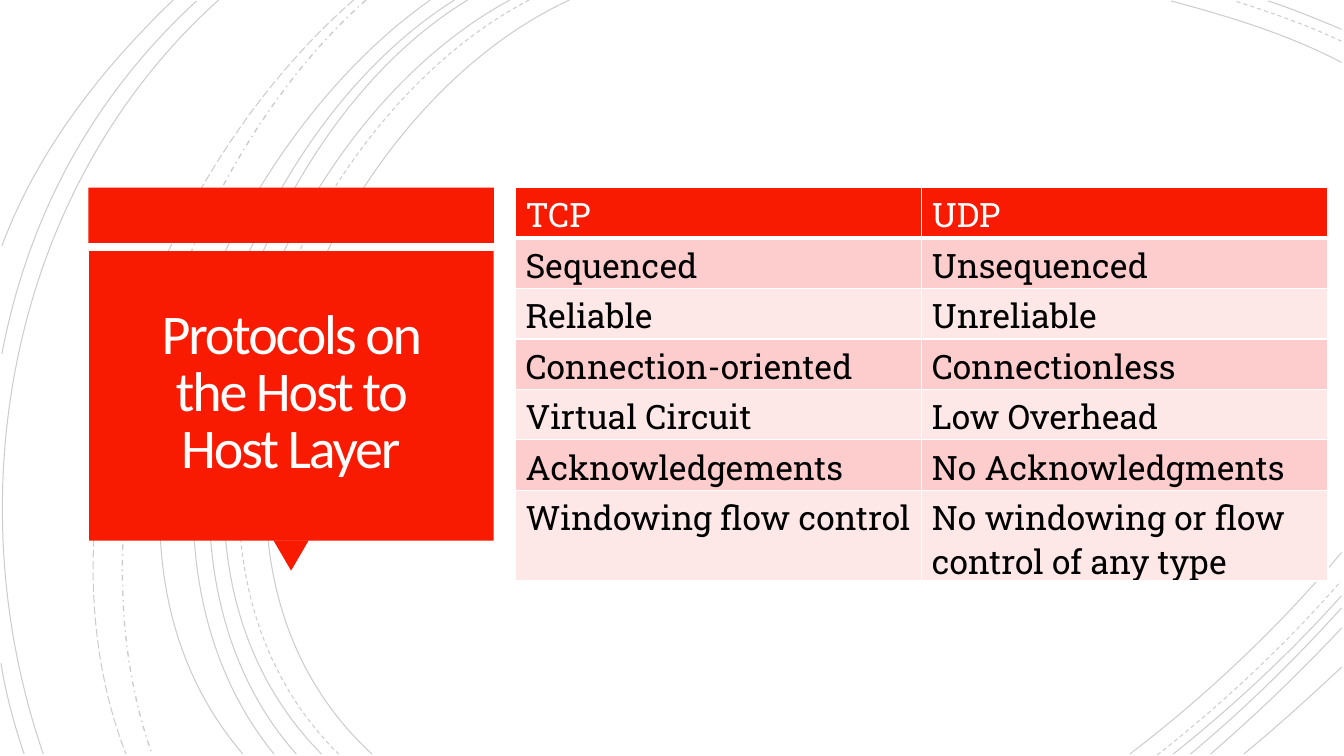
from lxml import etree
from pptx import Presentation
from pptx.dml.color import RGBColor
from pptx.enum.dml import MSO_LINE
from pptx.enum.shapes import MSO_SHAPE
from pptx.enum.text import MSO_ANCHOR, PP_ALIGN
from pptx.oxml.ns import qn
from pptx.util import Pt

SOLID, DASH = MSO_LINE.SOLID, MSO_LINE.DASH
LONG_DASH, DASH_DOT = MSO_LINE.LONG_DASH, MSO_LINE.DASH_DOT
RECTANGLE, TRIANGLE = MSO_SHAPE.RECTANGLE, MSO_SHAPE.ISOSCELES_TRIANGLE
MIDDLE, CENTER = MSO_ANCHOR.MIDDLE, PP_ALIGN.CENTER

RED, PALE_RED, PALEST_RED = "F81B02", "FCCDCC", "FEE8E7"
WHITE, TITLE_WHITE, BLACK = "FFFFFF", "FFFEFF", "000000"

# Each arc: start, two control points, end; all in points.
ARCS = [
    (SOLID, [(406.8, 0), (226.8, 82.8), (103, 388.8), (265.7, 538.6)]),
    (SOLID, [(958.3, 44.6), (920.2, 24.5), (877, 11.5), (836.6, 0.7)]),
    (SOLID, [(807.1, 538.6), (861.8, 496.8), (913.7, 447.8), (958.3, 394.6)]),
    (DASH, [(378, 0), (205.2, 90), (88.6, 386.6), (241.9, 538.6)]),
    (DASH, [(958.3, 29.5), (933.8, 18), (907.2, 8.6), (882, 0.7)]),
    (DASH, [(826.6, 539.3), (873.4, 502.6), (918, 460.8), (957.6, 415.4)]),
    (SOLID, [(364.3, 0), (194.4, 91.4), (79.2, 386.6), (229.7, 538.6)]),
    (SOLID, [(958.3, 20.9), (941, 13.7), (923.8, 6.5), (905.8, 0.7)]),
    (SOLID, [(838.1, 538.6), (880.6, 504.7), (921.6, 466.6), (958.3, 425.5)]),
    (SOLID, [(334.1, 0), (175.7, 95.8), (79.2, 389.5), (211.7, 538.6)]),
    (SOLID, [(850.3, 538.6), (888.5, 506.9), (924.5, 471.6), (958.3, 434.2)]),
    (SOLID, [(324.7, 0), (166.3, 99.4), (69.8, 383.8), (195.8, 538.6)]),
    (SOLID, [(864.7, 538.6), (897.1, 510.5), (928.8, 480.2), (958.3, 448.6)]),
    (SOLID, [(307.4, 0), (156.2, 105.8), (38.2, 380.9), (173.5, 538.6)]),
    (SOLID, [(888.5, 538.6), (912.2, 519.1), (935.3, 498.2), (958.3, 476.6)]),
    (DASH_DOT, [(261.4, 0), (126.7, 119.5), (46.8, 366.5), (108.7, 538.6)]),
    (LONG_DASH, [(252.7, 0), (113, 121.7), (20.9, 359.3), (90, 538.6)]),
    (SOLID, [(156.2, 0), (7.9, 133.2), (-33.1, 352.8), (31, 538.6)]),
    (SOLID, [(140.4, 0.7), (66.2, 69.1), (20.2, 154.1), (1.4, 252.7)]),
    (SOLID, [(0.7, 473.8), (4.3, 496.1), (10.1, 517.7), (17.3, 538.6)]),
    (SOLID, [(123.8, 0), (72, 49.7), (26.6, 108), (1.4, 175.7)]),
]

PROTOCOLS = [
    ("TCP", "UDP"),
    ("Sequenced", "Unsequenced"),
    ("Reliable", "Unreliable"),
    ("Connection-oriented", "Connectionless"),
    ("Virtual Circuit", "Low Overhead"),
    ("Acknowledgements", "No Acknowledgments"),
    ("Windowing flow control", "No windowing or flow control of any type"),
]


def color(hex_code):
    return RGBColor.from_string(hex_code)


class SlideBuilder:
    title_font = "Calibri"
    table_font = "Roboto Slab"

    def __init__(self, page):
        self.page = page

    def style(self, paragraph, font_name, size, hex_code):
        font = paragraph.font
        font.name, font.size, font.bold = font_name, Pt(size), False
        font.color.rgb = color(hex_code)

    def arc(self, dash, points):
        """Draw one faint cubic curve through a start, two controls and an end."""
        start, *others = [(Pt(x), Pt(y)) for x, y in points]
        builder = self.page.shapes.build_freeform(*start)
        builder.add_line_segments(others, close=False)
        shape = builder.convert_to_shape()
        segments = list(shape._element.iter(qn("a:lnTo")))
        curve = etree.SubElement(segments[0].getparent(), qn("a:cubicBezTo"))
        for segment in segments:
            curve.append(segment[0])
            segment.getparent().remove(segment)
        shape.shadow.inherit = False
        shape.fill.background()
        shape.line.color.rgb = color(BLACK)
        shape.line.width = Pt(1 if dash == DASH_DOT else 0.75)
        shape.line.dash_style = dash
        ink = shape.line._ln.find(".//" + qn("a:srgbClr"))
        etree.SubElement(ink, qn("a:alpha"), val="20000")

    def block(self, kind, left, top, width, height, rotation=0):
        shape = self.page.shapes.add_shape(kind, Pt(left), Pt(top), Pt(width), Pt(height))
        shape.rotation = rotation
        shape.shadow.inherit = False
        shape.fill.solid()
        shape.fill.fore_color.rgb = color(RED)
        shape.line.fill.background()

    def title(self, text, left, top, width, height):
        box = self.page.shapes.add_textbox(Pt(left), Pt(top), Pt(width), Pt(height))
        frame = box.text_frame
        frame.word_wrap = True
        frame.vertical_anchor = MIDDLE
        frame.margin_left = frame.margin_right = Pt(18)
        frame.margin_top = frame.margin_bottom = Pt(18)
        paragraph = frame.paragraphs[0]
        paragraph.text = text
        paragraph.alignment = CENTER
        paragraph.line_spacing = 0.85
        self.style(paragraph, self.title_font, 40, TITLE_WHITE)
        paragraph._p.pPr.find(qn("a:defRPr")).set("spc", "-150")

    def cell_borders(self, cell, bottom_width):
        properties = cell._tc.get_or_add_tcPr()
        for side, width in (("L", 1), ("R", 1), ("T", 1), ("B", bottom_width)):
            line = etree.SubElement(properties, qn("a:ln" + side), w=str(Pt(width)))
            fill = etree.SubElement(line, qn("a:solidFill"))
            etree.SubElement(fill, qn("a:srgbClr"), val=WHITE)

    def table(self, rows, left, top, width, height, row_height):
        frame = self.page.shapes.add_table(
            len(rows), len(rows[0]), Pt(left), Pt(top), Pt(width), Pt(height))
        for row_index, texts in enumerate(rows):
            header = row_index == 0
            band = RED if header else (PALEST_RED, PALE_RED)[row_index % 2]
            frame.table.rows[row_index].height = Pt(row_height)
            for column_index, text in enumerate(texts):
                cell = frame.table.cell(row_index, column_index)
                self.cell_borders(cell, 3 if header else 1)
                cell.fill.solid()
                cell.fill.fore_color.rgb = color(band)
                paragraph = cell.text_frame.paragraphs[0]
                paragraph.text = text
                self.style(paragraph, self.table_font, 24, WHITE if header else BLACK)
        frame.height = Pt(height)


def main():
    deck = Presentation()
    deck.slide_width, deck.slide_height = Pt(960), Pt(540)
    page = deck.slides.add_slide(deck.slide_layouts[6])
    page.background.fill.solid()
    page.background.fill.fore_color.rgb = color(WHITE)

    builder = SlideBuilder(page)
    for dash, points in ARCS:
        builder.arc(dash, points)
    builder.block(RECTANGLE, 63.2, 134, 289.6, 39.6)
    builder.block(TRIANGLE, 195.3, 386, 25.2, 21.6, rotation=180)
    builder.block(RECTANGLE, 63.6, 179.4, 289, 206.8)
    builder.title("Protocols on the Host to Host Layer", 69.8, 185, 275.8, 193.7)
    builder.table(PROTOCOLS, 368.2, 134, 580.4, 280.8, row_height=29.5)
    deck.save("out.pptx")


if __name__ == "__main__":
    main()
